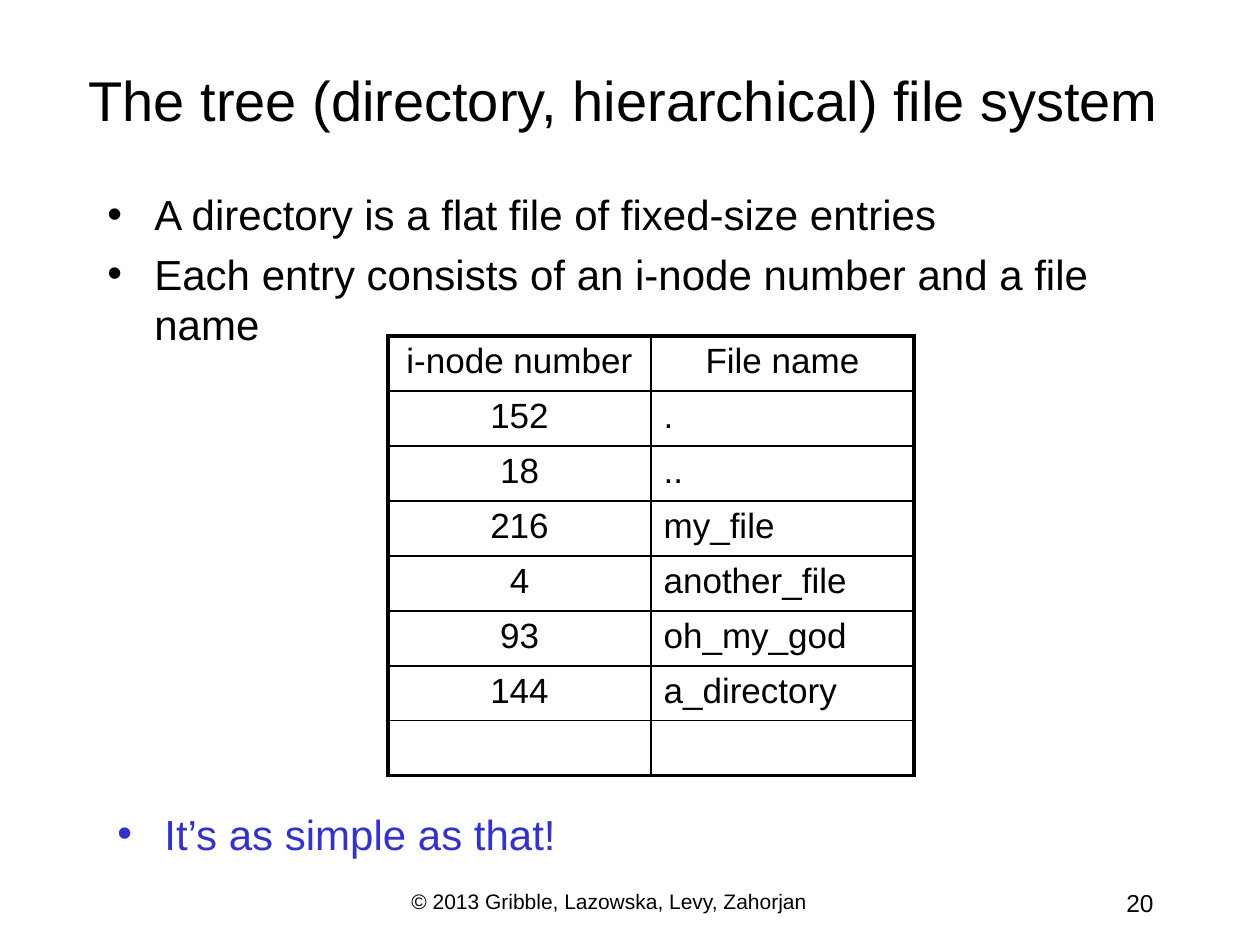
import pptx
import pptx.dml.color
import pptx.enum.text
import pptx.oxml.ns
import pptx.util
from lxml import etree

BLACK = pptx.dml.color.RGBColor(0x00, 0x00, 0x00)
BLUE = pptx.dml.color.RGBColor(0x33, 0x33, 0xCC)
ALIGN = pptx.enum.text.PP_ALIGN
ANCHOR = pptx.enum.text.MSO_ANCHOR
FONT = "Arial"
INDENT = 47
THIN, THICK = 1, 2.25
ENTRIES = [
    ("i-node number", "File name"),
    ("152", "."),
    ("18", ".."),
    ("216", "my_file"),
    ("4", "another_file"),
    ("93", "oh_my_god"),
    ("144", "a_directory"),
    ("", ""),
]


def px(n):
    return pptx.util.Emu(round(n * 914400 / 126))


def sub(parent, tag, **attrs):
    return etree.SubElement(parent, pptx.oxml.ns.qn(tag), attrs)


def write(p, text, size, color=BLACK, align=ALIGN.LEFT):
    p.alignment = align
    r = p.add_run()
    r.text = text
    fmt = {"name": FONT, "size": pptx.util.Pt(size)}
    for key, value in fmt.items():
        setattr(r.font, key, value)
    r.font.color.rgb = color


def text_frame(s, box, **fmt):
    tf = s.shapes.add_textbox(*map(px, box)).text_frame
    tf.word_wrap = True
    for key, value in fmt.items():
        setattr(tf, key, value)
    return tf


def add_line(s, box, text, size, align=ALIGN.LEFT, anchor=ANCHOR.TOP):
    tf = text_frame(s, box, vertical_anchor=anchor)
    write(tf.paragraphs[0], text, size, align=align)


def add_bullets(s, box, items, color=BLACK):
    tf = text_frame(s, box, margin_top=px(10))
    for i, item in enumerate(items):
        p = tf.add_paragraph() if i else tf.paragraphs[0]
        pPr = p._p.get_or_add_pPr()
        pPr.set("marL", str(px(INDENT)))
        pPr.set("indent", str(px(-INDENT)))
        sub(pPr, "a:buFont", typeface=FONT)
        sub(pPr, "a:buChar", char="•")
        if i:
            p.space_before = pptx.util.Pt(5)
        write(p, item, 24, color)


def set_borders(cell, widths):
    """Draw black edges; widths are points for left, right, top, bottom."""
    tcPr = cell._tc.get_or_add_tcPr()
    for side, width in zip("LRTB", widths):
        ln = sub(tcPr, f"a:ln{side}", w=str(pptx.util.Pt(width)))
        sub(sub(ln, "a:solidFill"), "a:srgbClr", val=str(BLACK))


def add_directory_table(s, box, rows):
    n_rows, n_cols = len(rows), len(rows[0])
    table = s.shapes.add_table(n_rows, n_cols, *map(px, box)).table
    for flag in ("first_row", "horz_banding"):
        setattr(table, flag, False)
    for col in table.columns:
        col.width = px(box[2] // n_cols)
    for i, row in enumerate(rows):
        table.rows[i].height = px(box[3] // n_rows)
        for j, text in enumerate(row):
            cell = table.cell(i, j)
            outer = (j == 0, j == n_cols - 1, i == 0, i == n_rows - 1)
            set_borders(cell, [THICK if edge else THIN for edge in outer])
            cell.fill.background()
            if text:
                centred = i == 0 or j == 0
                write(cell.text_frame.paragraphs[0], text, 20,
                      align=ALIGN.CENTER if centred else ALIGN.LEFT)


def add_footer(s, box):
    left, top, width, height = box
    add_line(s, (left, top, 462, height),
             "© 2013 Gribble, Lazowska, Levy, Zahorjan", 12)
    number_width = 262
    add_line(s, (left + width - number_width, top, number_width, height),
             "20", 14, ALIGN.RIGHT)


def main():
    prs = pptx.Presentation()
    prs.slide_width, prs.slide_height = px(1260), px(945)
    s = prs.slides.add_slide(prs.slide_layouts[6])
    add_footer(s, (399, 882, 767, 42))
    add_line(s, (52, 52, 1144, 95),
             "The tree (directory, hierarchical) file system", 32,
             ALIGN.CENTER, ANCHOR.MIDDLE)
    add_bullets(s, (95, 179, 1092, 683), [
        "A directory is a flat file of fixed-size entries",
        "Each entry consists of an i-node number and a file name",
    ])
    add_directory_table(s, (388, 336, 526, 440), ENTRIES)
    add_bullets(s, (105, 798, 1092, 74), ["It’s as simple as that!"], BLUE)
    prs.save("out.pptx")


if __name__ == "__main__":
    main()
